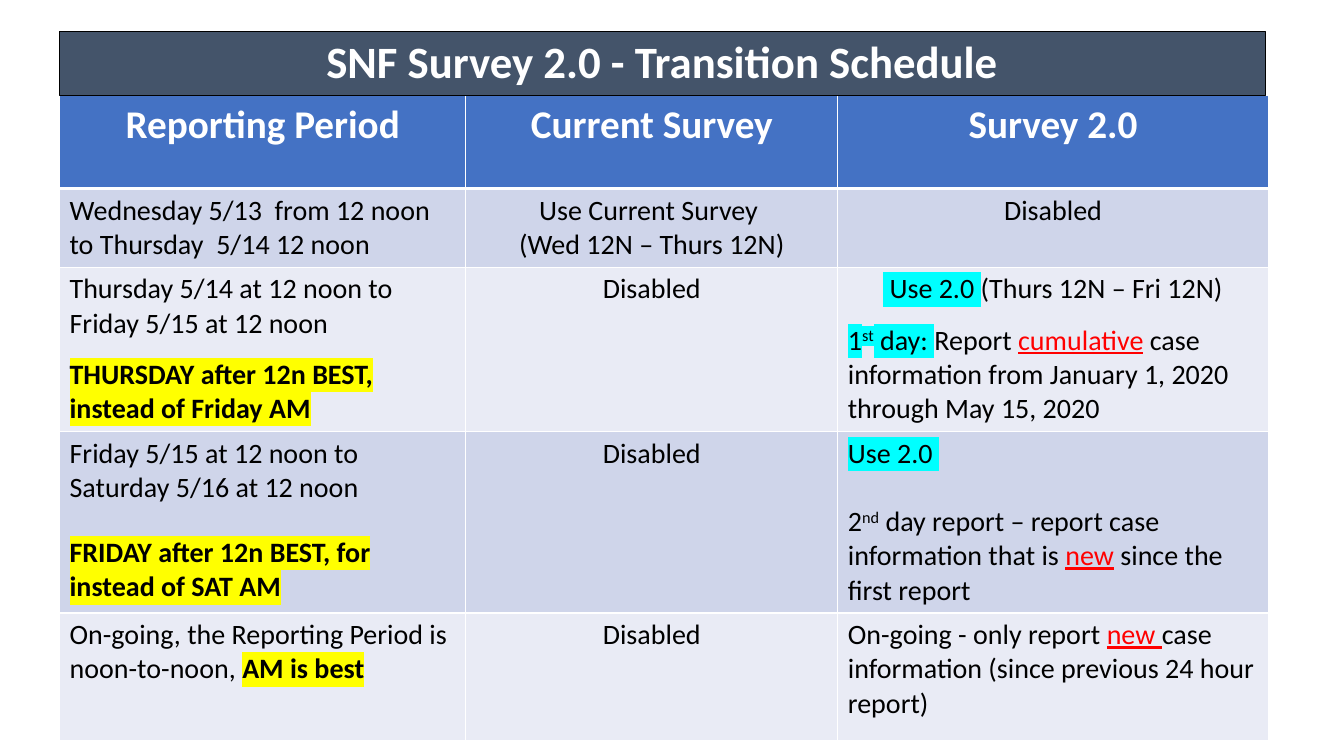
from lxml import etree
from pptx import Presentation
from pptx import util as u
from pptx.dml.color import RGBColor
from pptx.enum import shapes, text
from pptx.oxml import ns

WIDTH, HEIGHT = u.Inches(13.33), u.Inches(7.5)
WHITE = RGBColor(0xFF, 0xFF, 0xFF)
BLACK = RGBColor(0, 0, 0)
RED = RGBColor(0xFF, 0, 0)
YELLOW = RGBColor(0xFF, 0xFF, 0)
CYAN = RGBColor(0, 0xFF, 0xFF)
SLATE = RGBColor(0x44, 0x54, 0x6A)
BLUE = RGBColor(0x44, 0x72, 0xC4)
BANDS = [RGBColor(0xCF, 0xD5, 0xEA), RGBColor(0xE9, 0xEB, 0xF5)]

LEFT, TITLE_TOP, TITLE_WIDTH, TITLE_HEIGHT = 4.43, 4.13, 89.7, 8.53
TABLE_TOP = TITLE_TOP + TITLE_HEIGHT
COLUMN_SHARES = [30.23, 27.68, 32.03]
ROW_SHARES = [12.27, 9.6, 21.6, 23.73, 16.93]

TITLE = {"size": u.Pt(32), "bold": True, "color": WHITE}
HEADING = {"size": u.Pt(28), "bold": True, "color": WHITE}
BODY = {"size": u.Pt(20), "bold": False, "color": BLACK}
BEST = {"bold": True, "highlight": YELLOW}
USE = {"highlight": CYAN}
ORDINAL = {"baseline": 30000}
ALERT = {"color": RED, "underline": True}

CENTER = {"alignment": text.PP_ALIGN.CENTER}
DISABLED = [(CENTER, ["Disabled"])]
HEADINGS = ["Reporting Period", "Current Survey", "Survey 2.0"]


def gap(points):
    return {"space_before": u.Pt(points)}


SCHEDULE = [
    [
        [({}, ["Wednesday 5/13  from 12 noon to Thursday  5/14 12 noon"])],
        [(CENTER, ["Use Current Survey "]), (CENTER, ["(Wed 12N – Thurs 12N)"])],
        DISABLED,
    ],
    [
        [({}, ["Thursday 5/14 at 12 noon to"]),
         ({}, ["Friday 5/15 at 12 noon"]),
         (gap(12.2), [("THURSDAY after 12n BEST, instead of Friday AM", BEST)])],
        DISABLED,
        [(CENTER, [(" Use 2.0 ", USE), "(Thurs 12N – Fri 12N)"]),
         (gap(12.2), [("1", USE), ("st", USE | ORDINAL), (" day: ", USE), "Report ",
                      ("cumulative", ALERT),
                      " case information from January 1, 2020 through May 15, 2020"])],
    ],
    [
        [({}, ["Friday 5/15 at 12 noon to"]),
         ({}, ["Saturday 5/16 at 12 noon"]),
         (gap(22), [("FRIDAY after 12n BEST, for instead of SAT AM", BEST)])],
        DISABLED,
        [({}, [("Use 2.0 ", USE)]),
         (gap(24.4), ["2", ("nd", ORDINAL), " day report – report case information that is ",
                      ("new", ALERT), " since the first report"])],
    ],
    [
        [({}, ["On-going, the Reporting Period is"]),
         ({}, ["noon-to-noon, ", ("AM is best", BEST)])],
        DISABLED,
        [({}, ["On-going - only report ", ("new ", ALERT),
               "case information (since previous 24 hour report)"])],
    ],
]


def across(percent):
    return round(WIDTH * percent / 100)


def down(percent):
    return round(HEIGHT * percent / 100)


def set_all(target, values):
    for name, value in values.items():
        setattr(target, name, value)


def add_color(parent, color):
    fill = etree.SubElement(parent, ns.qn("a:solidFill"))
    etree.SubElement(fill, ns.qn("a:srgbClr"), val=str(color))


def write_span(para, words, style):
    values = dict(style)
    color = values.pop("color")
    highlight = values.pop("highlight", None)
    baseline = values.pop("baseline", None)
    span = para.add_run()
    span.text = words
    set_all(span.font, values | {"name": "Calibri"})
    span.font.color.rgb = color
    props = span._r.get_or_add_rPr()
    if baseline:
        props.set("baseline", str(baseline))
    if highlight is not None:
        mark = etree.Element(ns.qn("a:highlight"))
        etree.SubElement(mark, ns.qn("a:srgbClr"), val=str(highlight))
        props.find(ns.qn("a:solidFill")).addnext(mark)


def write_paras(frame, paras, base):
    for index, (layout, spans) in enumerate(paras):
        para = frame.add_paragraph() if index else frame.paragraphs[0]
        set_all(para, layout)
        for span in spans:
            words, style = (span, {}) if isinstance(span, str) else span
            write_span(para, words, base | style)


def add_borders(cell, widths):
    props = cell._tc.get_or_add_tcPr()
    for side, width in zip("LRTB", widths):
        line = etree.SubElement(props, ns.qn(f"a:ln{side}"), w=str(u.Pt(width)))
        add_color(line, WHITE)


def fill_cell(cell, paras, base, fill, widths):
    add_borders(cell, widths)
    cell.fill.solid()
    cell.fill.fore_color.rgb = fill
    write_paras(cell.text_frame, paras, base)


def add_schedule(page):
    table = page.shapes.add_table(
        len(ROW_SHARES), len(COLUMN_SHARES), across(LEFT), down(TABLE_TOP),
        across(sum(COLUMN_SHARES)), down(sum(ROW_SHARES))).table
    set_all(table, {"first_row": False, "horz_banding": False})
    for column, share in zip(table.columns, COLUMN_SHARES):
        column.width = across(share)
    for row, share in zip(table.rows, ROW_SHARES):
        row.height = down(share)
    for cell, heading in zip(table.rows[0].cells, HEADINGS):
        fill_cell(cell, [(CENTER, [heading])], HEADING, BLUE, [1, 1, 1, 3])
    for index, entries in enumerate(SCHEDULE):
        top = 1 if index else 3
        for cell, paras in zip(table.rows[index + 1].cells, entries):
            fill_cell(cell, paras, BODY, BANDS[index % 2], [1, 1, top, 1])


def add_title(page, words):
    box = page.shapes.add_shape(
        shapes.MSO_SHAPE.RECTANGLE, across(LEFT), down(TITLE_TOP),
        across(TITLE_WIDTH), down(TITLE_HEIGHT))
    box.shadow.inherit = False
    box.fill.solid()
    box.fill.fore_color.rgb = SLATE
    box.line.color.rgb = BLACK
    box.line.width = u.Pt(0.75)
    set_all(box.text_frame, {"word_wrap": True, "vertical_anchor": text.MSO_ANCHOR.MIDDLE})
    write_paras(box.text_frame, [(CENTER | {"line_spacing": 0.9}, [words])], TITLE)


def main():
    deck = Presentation()
    set_all(deck, {"slide_width": WIDTH, "slide_height": HEIGHT})
    page = deck.slides.add_slide(deck.slide_layouts[6])
    add_schedule(page)
    add_title(page, "SNF Survey 2.0 - Transition Schedule")
    deck.save("out.pptx")


if __name__ == "__main__":
    main()
